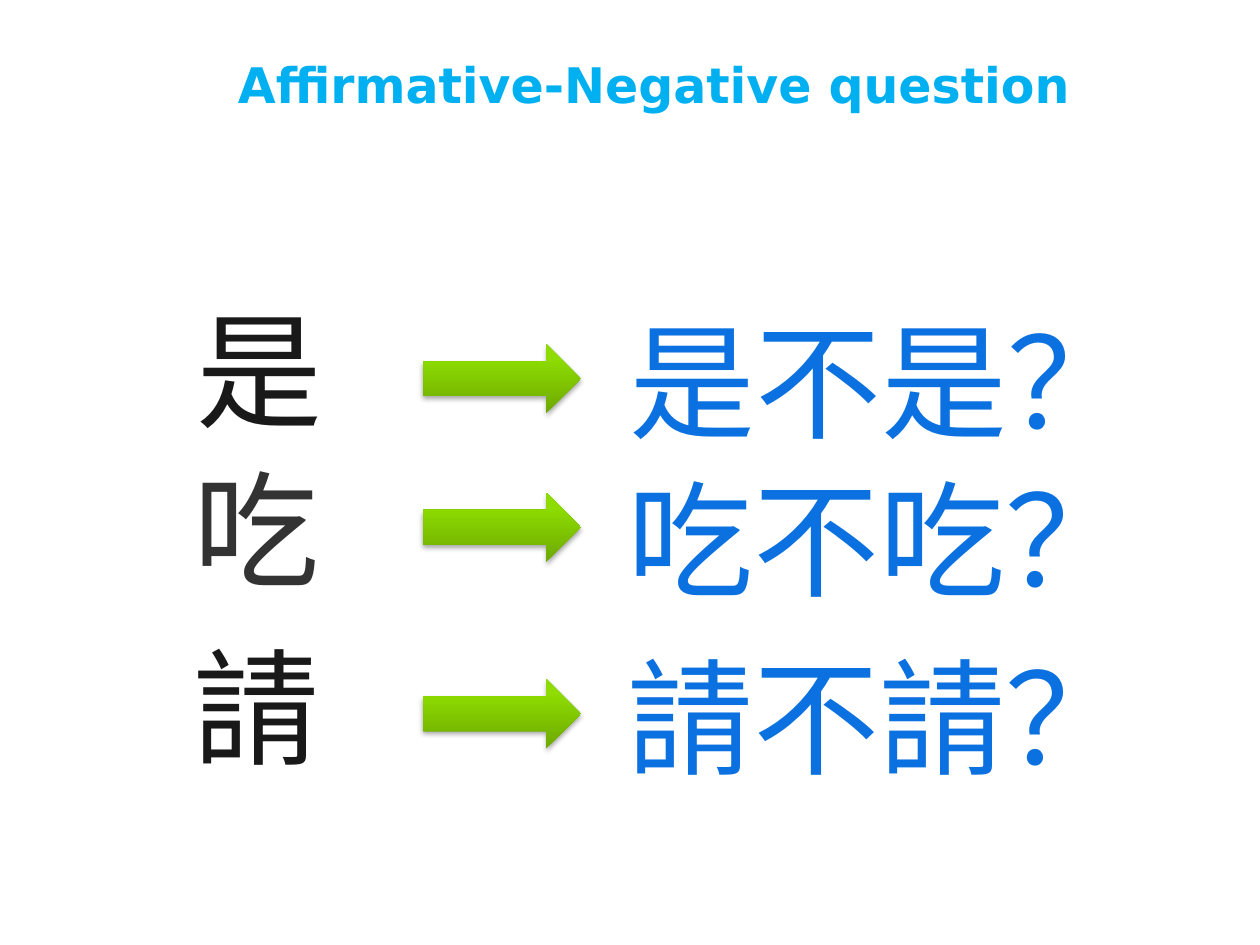
from pptx import Presentation, oxml, util as u
from pptx.dml.color import RGBColor
from pptx.enum import shapes, text
from pptx.oxml import ns

SKY = RGBColor(0x00, 0xB0, 0xF0)
BLUE = RGBColor(0x0C, 0x71, 0xE0)
INK = RGBColor(0x19, 0x19, 0x19)
CHARCOAL = RGBColor(0x33, 0x33, 0x33)
SHADE = RGBColor(0x00, 0x00, 0x00)
GREENS = ((0, RGBColor(0x6D, 0xA9, 0x01)), (80, RGBColor(0x8E, 0xDC, 0x01)),
          (100, RGBColor(0x8F, 0xDE, 0x00)))

WIDTH, HEIGHT = u.Inches(10), u.Inches(7.5)
COLUMNS, ROWS = 100, 75


def grid(left, top, width, height):
    """Turn a box in columns and rows into slide lengths."""
    column, row = WIDTH / COLUMNS, HEIGHT / ROWS
    return [round(size) for size in
            (left * column, top * row, width * column, height * row)]


def add_text(page, box, words, size, font, color, bold=False,
             align=text.PP_ALIGN.LEFT):
    """Place one vertically centred line of text in a box."""
    frame = page.shapes.add_textbox(*grid(*box)).text_frame
    frame.word_wrap = True
    frame.vertical_anchor = text.MSO_ANCHOR.MIDDLE
    frame.text = words
    para = frame.paragraphs[0]
    para.alignment = align
    span = para.runs[0].font
    span.size, span.name, span.bold = u.Pt(size), font, bold
    span.color.rgb = color


def add_arrow(page, box):
    """Place a green gradient arrow with a soft shadow."""
    arrow = page.shapes.add_shape(shapes.MSO_SHAPE.RIGHT_ARROW, *grid(*box))
    arrow.line.fill.background()
    stops = "".join(f'<a:gs pos="{share * 1000}"><a:srgbClr val="{color}"/></a:gs>'
                    for share, color in GREENS)
    gradient = oxml.parse_xml(
        f'<a:gradFill {ns.nsdecls("a")} rotWithShape="1"><a:gsLst>{stops}</a:gsLst>'
        '<a:lin ang="16200000" scaled="0"/></a:gradFill>')
    shadow = oxml.parse_xml(
        f'<a:effectLst {ns.nsdecls("a")}><a:outerShdw blurRad="{u.Pt(3.1)}" '
        f'dist="{u.Pt(1.8)}" dir="5400000" rotWithShape="0">'
        f'<a:srgbClr val="{SHADE}"><a:alpha val="35000"/></a:srgbClr>'
        '</a:outerShdw></a:effectLst>')
    properties = arrow._element.spPr
    properties.find(ns.qn("a:prstGeom")).addnext(gradient)
    properties.append(shadow)


def add_title(page, box):
    """Place the centred heading."""
    add_text(page, box, " Affirmative-Negative question", 28, "DejaVu Sans",
             SKY, True, text.PP_ALIGN.CENTER)


def add_pattern(page, box, verb, color, arrow_left, arrow_drop):
    """Place a verb, an arrow and the question made from the verb."""
    left, top, width, height = box
    question_width = 42.4
    add_text(page, (left, top, 12.1, height), verb, 72, "Times New Roman", color)
    add_text(page, (left + width - question_width, top + 0.8, question_width, height),
             f"{verb}不{verb}？", 72, "Times New Roman", BLUE)
    add_arrow(page, (arrow_left, top + arrow_drop, 12.5, 5.5))


def main():
    """Build and save the slide."""
    deck = Presentation()
    deck.slide_width, deck.slide_height = WIDTH, HEIGHT
    page = deck.slides.add_slide(deck.slide_layouts[6])
    add_title(page, (5.8, 3.3, 90.8, 6.7))
    patterns = (("是", INK, 14.6, 22.7, 4.6),
                ("吃", CHARCOAL, 14.4, 35.3, 3.8),
                ("請", INK, 14.4, 49.4, 4.5))
    for verb, color, left, top, arrow_drop in patterns:
        add_pattern(page, (left, top, 76.8, 13.1), verb, color, 33.6, arrow_drop)
    deck.save("out.pptx")


if __name__ == "__main__":
    main()
